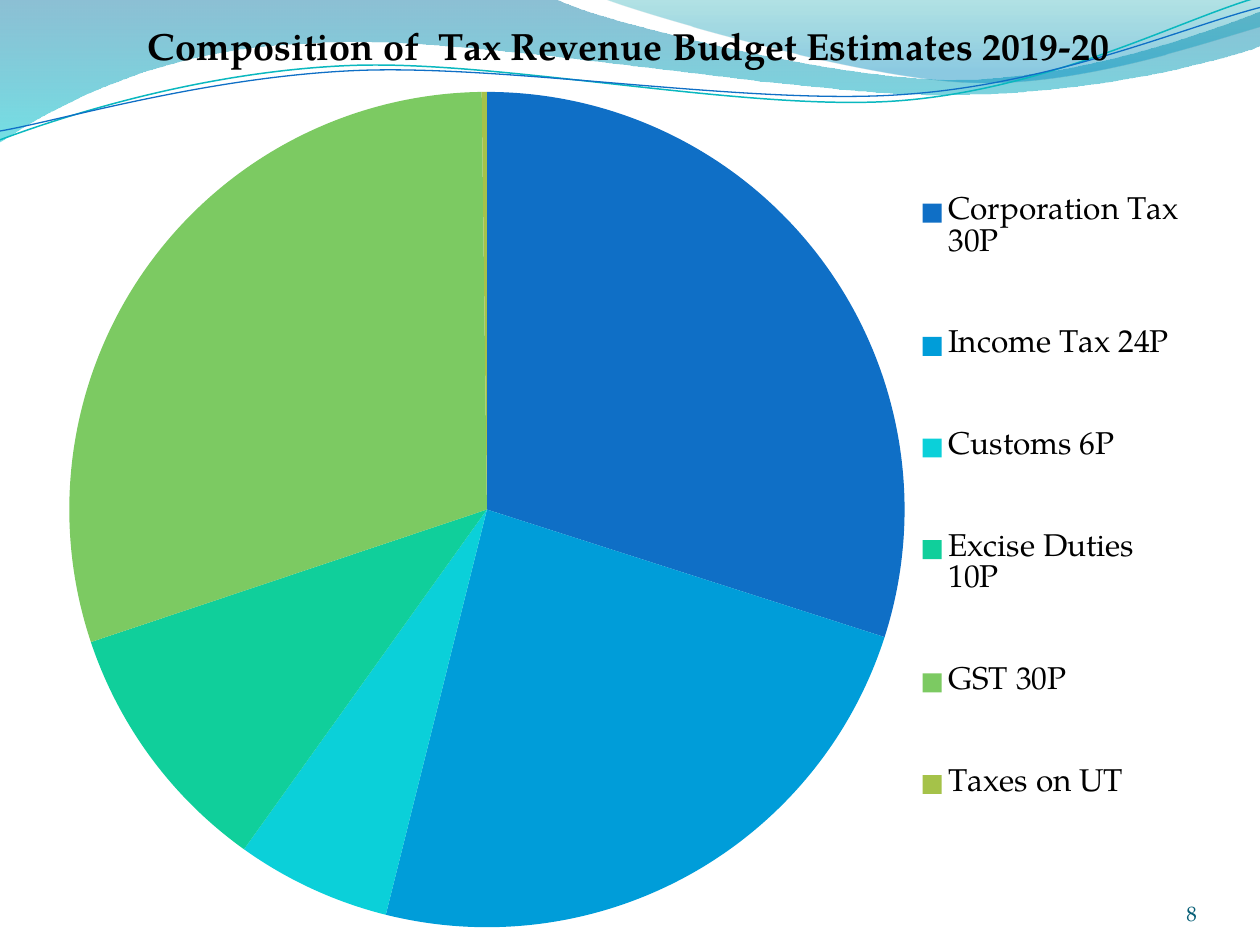
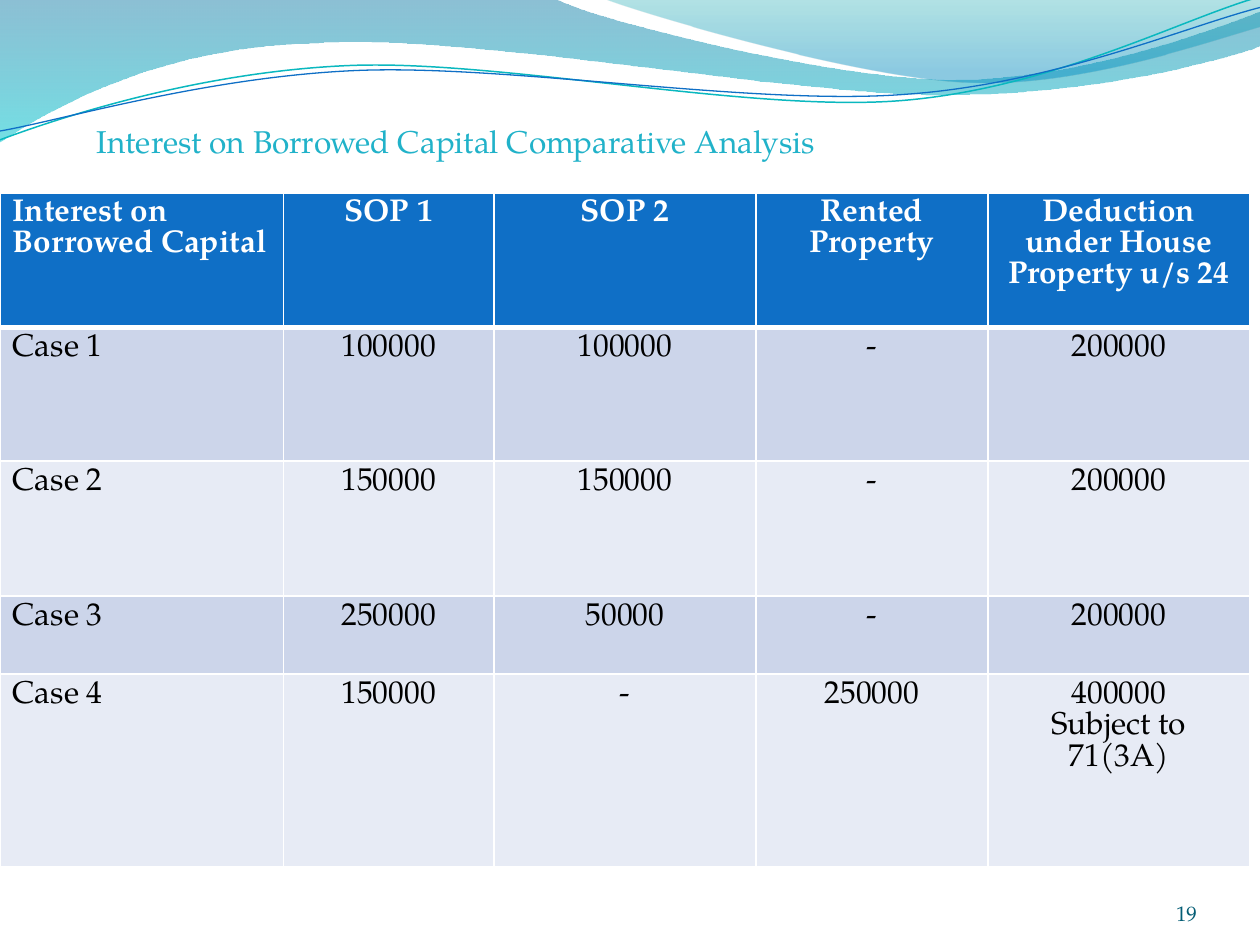
from math import cos, radians, sin

from lxml import etree
from pptx import Presentation
from pptx.chart.data import CategoryChartData
from pptx.dml.color import RGBColor
from pptx.enum.chart import XL_CHART_TYPE, XL_LEGEND_POSITION
from pptx.enum.text import MSO_ANCHOR, PP_ALIGN
from pptx.oxml import parse_xml
from pptx.oxml.ns import nsdecls, qn
from pptx.util import Inches, Pt

PIE = XL_CHART_TYPE.PIE
LEGEND_RIGHT = XL_LEGEND_POSITION.RIGHT
LEFT, CENTER, RIGHT = PP_ALIGN.LEFT, PP_ALIGN.CENTER, PP_ALIGN.RIGHT
TOP, BOTTOM = MSO_ANCHOR.TOP, MSO_ANCHOR.BOTTOM

# Shared style
SLIDE_W, SLIDE_H = 10, 7.5
FONT = "TeX Gyre Pagella"
COLORS = {
    "text": "000000", "white": "FFFFFF", "number": "045D75", "title": "21B2C9",
    "blue": "0F6FC6", "teal": "0AB8BF", "band_dark": "CCD5EA", "band_light": "E7EBF5",
    "wave_top": "0074A1", "wave_bottom": "00C6CF",
    "corner_top": "00A1A9", "corner_bottom": "008BBF",
}

# Wave header, in inches: six numbers make a curve, two make a straight line
WAVE_BANDS = [
    {"start": (0, 0),
     "segments": [(4.4, -0.01), (4.76, 0.17, 6.64, 0.63, 7.58, 0.63),
                  (8.53, 0.63, 9.58, 0.26, 10, 0.09), (10.01, 0.36),
                  (9.83, 0.44, 8.7, 0.76, 7.46, 0.75),
                  (6.22, 0.75, 3.82, 0.28, 2.57, 0.34),
                  (1.29, 0.36, 0.46, 0.83, -0.01, 1.13), (0, 0)],
     "stops": [(0, "wave_top", 45), (1, "wave_bottom", 55)]},
    {"start": (4.79, -0.01),
     "segments": [(5.09, 0.11, 6.82, 0.62, 7.69, 0.65),
                  (8.56, 0.69, 9.61, 0.32, 10, 0.21), (10, 0), (4.79, -0.01)],
     "stops": [(0, "corner_top", 30), (0.8, "corner_bottom", 45)]},
]
WAVE_LINES = [
    {"start": (0, 1.11), "line": ("teal", 0.85), "center": (4.99, 0.58),
     "segments": [(0.48, 0.93, 1.58, 0.57, 2.77, 0.52),
                  (3.95, 0.47, 5.93, 0.89, 7.13, 0.8),
                  (8.33, 0.71, 9.38, 0.15, 9.98, -0.02)]},
    {"start": (0, 1.04), "line": ("blue", 0.75), "center": (5, 0.59),
     "segments": [(0.47, 0.96, 1.64, 0.61, 2.83, 0.56),
                  (4.03, 0.51, 5.97, 0.84, 7.17, 0.75),
                  (8.36, 0.67, 9.41, 0.21, 10, 0.06)]},
]
LINE_TILT = 2.7

# Tax revenue chart
CHART_TITLE = "Composition of  Tax Revenue Budget Estimates 2019-20"
SERIES_NAMES = ["Series 1", "Series 2"]
TAXES = [
    ("Corporation Tax 30P", 30, "0F6FC6"),
    ("Income Tax 24P", 24, "009DD9"),
    ("Customs 6P", 6, "0BD0D9"),
    ("Excise Duties 10P", 10, "10CF9B"),
    ("GST 30P", 30, "7CCA62"),
    ("Taxes on UT", 0.2, "A5C249"),
]

# Interest table; a line break starts a new paragraph
TABLE_TITLE = "Interest on Borrowed Capital Comparative Analysis"
COL_WIDTHS = [2.25, 1.67, 2.08, 1.84, 2.08]
ROW_HEIGHTS = [1.07, 1.06, 1.07, 0.62, 1.53]
INTEREST_ROWS = [
    ["Interest on Borrowed Capital", "SOP 1", "SOP 2", "Rented\nProperty",
     "Deduction under House Property u/s 24"],
    ["Case 1", "100000", "100000", "-", "200000"],
    ["Case 2", "150000", "150000", "-", "200000"],
    ["Case 3", "250000", "50000", "-", "200000"],
    ["Case 4", "150000", "-", "250000", "400000\nSubject to 71(3A)"],
]


def rgb(name):
    return RGBColor.from_string(COLORS[name])


def style_font(font, size, color, bold=False):
    font.name, font.size, font.bold = FONT, Pt(size), bold
    font.color.rgb = rgb(color)


def write(tf, text, size, color, align=LEFT, bold=False):
    for i, line in enumerate(text.split("\n")):
        p = tf.add_paragraph() if i else tf.paragraphs[0]
        p.alignment = align
        r = p.add_run()
        r.text = line
        style_font(r.font, size, color, bold)


def add_text(slide, box, text, size, color, align=LEFT, anchor=TOP, inset=None):
    tf = slide.shapes.add_textbox(*map(Inches, box)).text_frame
    tf.word_wrap = True
    tf.vertical_anchor = anchor
    if inset is not None:
        tf.margin_left = tf.margin_right = tf.margin_top = tf.margin_bottom = inset
    write(tf, text, size, color, align)


# Wave header
def turn(point, center, degrees):
    dx, dy = point[0] - center[0], point[1] - center[1]
    c, s = cos(radians(degrees)), sin(radians(degrees))
    return center[0] + dx * c - dy * s, center[1] + dx * s + dy * c


def add_outline(slide, wave, close):
    points = [wave["start"]]
    for seg in wave["segments"]:
        points += zip(seg[::2], seg[1::2])
    if "center" in wave:
        points = [turn(point, wave["center"], LINE_TILT) for point in points]
    points = [(Inches(x), Inches(y)) for x, y in points]
    builder = slide.shapes.build_freeform(*points[0])
    builder.add_line_segments(points[1:], close=close)
    sp = builder.convert_to_shape()
    sp.shadow.inherit = False

    # Join each three points of a curve into one Bezier segment
    steps = iter(list(sp._element.iter(qn("a:lnTo"))))
    for seg in wave["segments"]:
        first = next(steps)
        if len(seg) == 6:
            first.tag = qn("a:cubicBezTo")
            for _ in range(2):
                step = next(steps)
                first.append(step[0])
                step.getparent().remove(step)
    return sp


def add_waves(slide):
    for wave in WAVE_BANDS:
        sp = add_outline(slide, wave, True)
        sp.line.fill.background()
        sp.fill.gradient()
        sp.fill.gradient_angle = 270
        for stop, (position, color, _) in zip(sp.fill.gradient_stops, wave["stops"]):
            stop.position = position
            stop.color.rgb = rgb(color)
        for node, (_, _, alpha) in zip(sp._element.spPr.iter(qn("a:srgbClr")), wave["stops"]):
            etree.SubElement(node, qn("a:alpha")).set("val", str(alpha * 1000))
    for wave in WAVE_LINES:
        sp = add_outline(slide, wave, False)
        sp.rotation = -LINE_TILT
        sp.fill.background()
        color, width = wave["line"]
        sp.line.color.rgb = rgb(color)
        sp.line.width = Pt(width)


def new_slide(prs, number):
    slide = prs.slides.add_slide(prs.slide_layouts[6])
    add_waves(slide)
    add_text(slide, (8.67, 6.95, 0.83, 0.4), number, 12, "number", RIGHT, BOTTOM, 0)
    return slide


# Chart parts are given in inches and stored as fractions of the slide
def place(element, box, inner=False):
    for old in element.findall(qn("c:layout")):
        element.remove(old)
    target = '<c:layoutTarget val="inner"/>' if inner else ""
    modes = '<c:xMode val="edge"/><c:yMode val="edge"/>'
    sizes = "".join(f'<c:{tag} val="{value / full}"/>' for tag, value, full
                    in zip("xywh", box, (SLIDE_W, SLIDE_H) * 2))
    layout = parse_xml(f'<c:layout {nsdecls("c")}><c:manualLayout>{target}{modes}{sizes}'
                       '</c:manualLayout></c:layout>')
    before = [node for tag in ("c:tx", "c:legendPos") for node in element.findall(qn(tag))]
    if before:
        before[0].addnext(layout)
    else:
        element.insert(0, layout)


def add_tax_chart(slide):
    data = CategoryChartData()
    data.categories = [name for name, _, _ in TAXES]
    for name in SERIES_NAMES:
        data.add_series(name, [value for _, value, _ in TAXES])
    chart = slide.shapes.add_chart(PIE, 0, 0, Inches(SLIDE_W), Inches(SLIDE_H), data).chart
    style_font(chart.font, 18, "text")

    chart.has_title = True
    write(chart.chart_title.text_frame, CHART_TITLE, 21.6, "text", CENTER, True)
    chart.has_legend = True
    chart.legend.position = LEGEND_RIGHT
    chart.legend.include_in_layout = False
    style_font(chart.legend.font, 18, "text")

    plot = chart.plots[0]
    plot.vary_by_categories = True
    for i, (_, _, color) in enumerate(TAXES):
        fill = plot.series[0].points[i].format.fill
        fill.solid()
        fill.fore_color.rgb = RGBColor.from_string(color)
    # A new pie holds one series; this adds the second with the same colours
    chart.replace_data(data)

    place(chart.chart_title._element, (1.12, 0.17))
    place(chart.legend._element, (7.27, 1.01, 2.14, 5.9))
    place(chart._chartSpace.chart.plotArea, (0.55, 0.73, 6.63, 6.63), inner=True)


# Table
def set_borders(cell, top, bottom):
    tcPr = cell._tc.get_or_add_tcPr()
    for side, width in zip("LRTB", (1, 1, top, bottom)):
        tcPr.append(parse_xml(
            f'<a:ln{side} {nsdecls("a")} w="{Pt(width)}"><a:solidFill>'
            f'<a:srgbClr val="{COLORS["white"]}"/></a:solidFill></a:ln{side}>'))


def add_interest_table(slide):
    frame = slide.shapes.add_table(
        len(ROW_HEIGHTS), len(COL_WIDTHS), 0, Inches(1.53),
        Inches(sum(COL_WIDTHS)), Inches(sum(ROW_HEIGHTS)))
    table = frame.table
    for col, width in zip(table.columns, COL_WIDTHS):
        col.width = Inches(width)
    for row, height in zip(table.rows, ROW_HEIGHTS):
        row.height = Inches(height)
    for i, texts in enumerate(INTEREST_ROWS):
        header = i == 0
        band = "blue" if header else ("band_light", "band_dark")[i % 2]
        for j, text in enumerate(texts):
            cell = table.cell(i, j)
            set_borders(cell, 3 if i == 1 else 1, 3 if header else 1)
            cell.fill.solid()
            cell.fill.fore_color.rgb = rgb(band)
            write(cell.text_frame, text, 18, "white" if header else "text",
                  CENTER if j else LEFT, header)


def main():
    prs = Presentation()
    prs.slide_width, prs.slide_height = Inches(SLIDE_W), Inches(SLIDE_H)

    # Tax revenue
    slide = new_slide(prs, "8")
    add_tax_chart(slide)

    # Interest on borrowed capital
    slide = new_slide(prs, "19")
    add_interest_table(slide)
    add_text(slide, (0.67, 0.92, 7.58, 0.4), TABLE_TITLE, 18, "title")

    prs.save("out.pptx")


if __name__ == "__main__":
    main()
